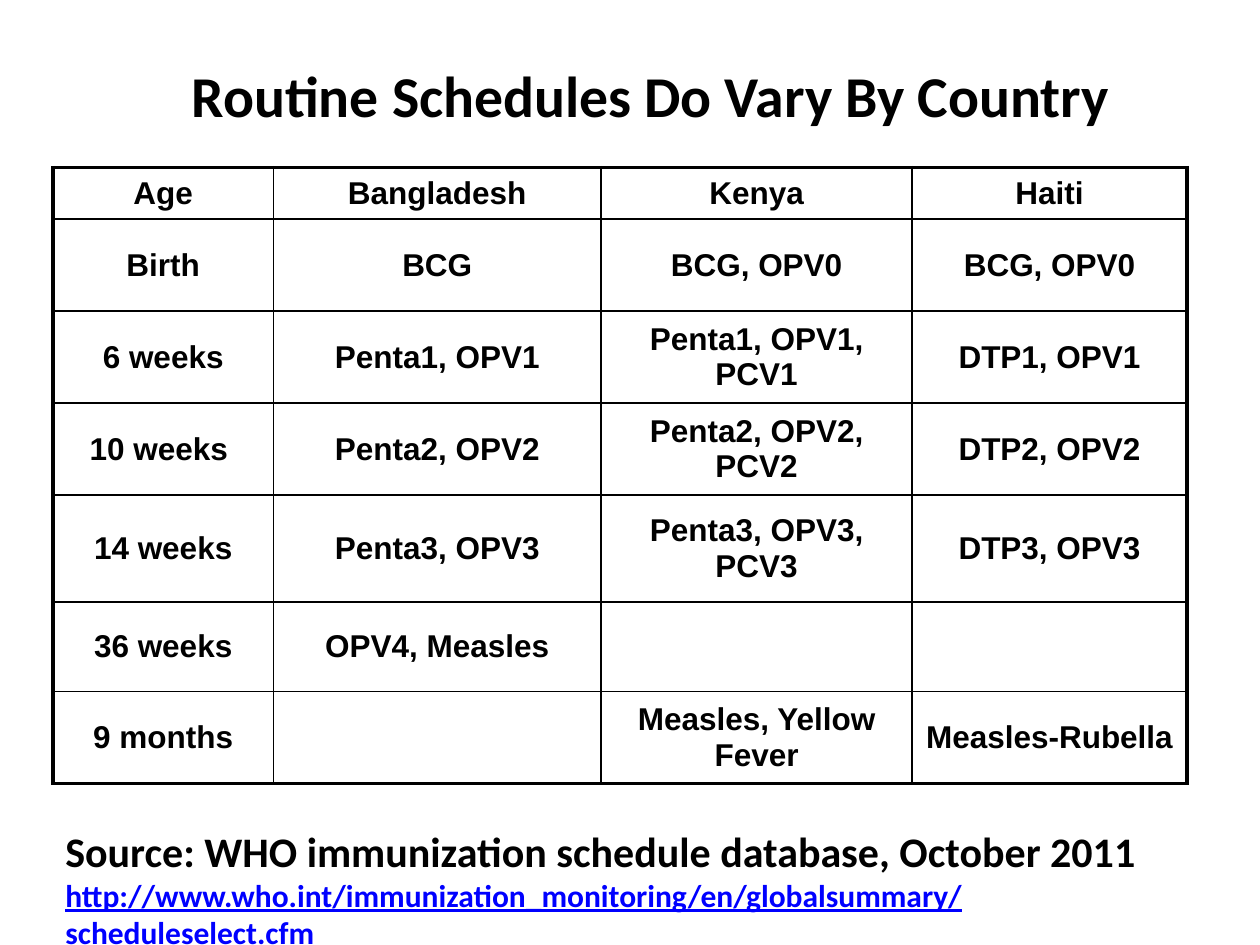
from lxml import etree
from pptx import Presentation
from pptx import util as u
from pptx.dml.color import RGBColor
from pptx.enum import text
from pptx.oxml.ns import qn

BLACK = RGBColor(0, 0, 0)
LINK_BLUE = RGBColor(0, 0, 0xFF)
WIDTH, HEIGHT = u.Inches(10), u.Inches(7.5)
LEFT = u.Inches(0.42)
THICK, THIN = u.Pt(2.25), u.Pt(1)

COLUMNS = [1.75, 2.6, 2.47, 2.18]
ROWS = [0.41, 0.73, 0.73, 0.73, 0.85, 0.71, 0.73]
SCHEDULE = [
    ["Age", "Bangladesh", "Kenya", "Haiti"],
    ["Birth", "BCG", "BCG, OPV0", "BCG, OPV0"],
    ["6 weeks", "Penta1, OPV1", "Penta1, OPV1, PCV1", "DTP1, OPV1"],
    ["10 weeks ", "Penta2, OPV2", "Penta2, OPV2, PCV2", "DTP2, OPV2"],
    ["14 weeks", "Penta3, OPV3", "Penta3, OPV3, PCV3", "DTP3, OPV3"],
    ["36 weeks", "OPV4, Measles", "", ""],
    ["9 months", "", "Measles, Yellow Fever", "Measles-Rubella"],
]
TITLE = {"name": "Calibri", "size": u.Pt(33), "bold": True}
CELL = {"name": "Arial", "size": u.Pt(18), "bold": True}
SOURCE = {"name": "Calibri", "size": u.Pt(24), "bold": True}
LINK = {**SOURCE, "size": u.Pt(18), "underline": True}


def apply(target, values):
    for name, value in values.items():
        setattr(target, name, value)


def write(para, words, font, color=BLACK):
    span = para.add_run()
    span.text = words
    apply(span.font, font)
    span.font.color.rgb = color


def add_box(page, left, top, width, height, frame_format):
    box = page.shapes.add_textbox(left, top, width, height)
    apply(box.text_frame, {"word_wrap": True, **frame_format})
    return box.text_frame


def set_borders(cell, widths):
    """Draw the left, right, top and bottom edges, in that order."""
    properties = cell._tc.get_or_add_tcPr()
    for index, (side, width) in enumerate(zip("LRTB", widths)):
        line = etree.Element(qn(f"a:ln{side}"), w=str(width))
        fill = etree.SubElement(line, qn("a:solidFill"))
        etree.SubElement(fill, qn("a:srgbClr"), val=str(BLACK))
        properties.insert(index, line)


def space_before(para, percent):
    """Set the gap above a paragraph as a share of its text size."""
    gap = etree.Element(qn("a:spcBef"))
    etree.SubElement(gap, qn("a:spcPct"), val=str(percent * 1000))
    para._p.get_or_add_pPr().insert(0, gap)


def fill_cell(cell, words):
    cell.fill.background()
    cell.vertical_anchor = text.MSO_ANCHOR.MIDDLE
    para = cell.text_frame.paragraphs[0]
    para.alignment = text.PP_ALIGN.CENTER
    space_before(para, 20)
    if words:
        write(para, words, CELL)


def add_schedule(page):
    table = page.shapes.add_table(
        len(ROWS), len(COLUMNS), LEFT, u.Inches(1.33),
        u.Inches(sum(COLUMNS)), u.Inches(sum(ROWS))).table
    apply(table, {"first_row": False, "horz_banding": False})
    for column, width in zip(table.columns, COLUMNS):
        column.width = u.Inches(width)
    for row, height in zip(table.rows, ROWS):
        row.height = u.Inches(height)
    last_row, last_column = len(ROWS) - 1, len(COLUMNS) - 1
    for r, entries in enumerate(SCHEDULE):
        for c, words in enumerate(entries):
            cell = table.cell(r, c)
            fill_cell(cell, words)
            outer = (c == 0, c == last_column, r == 0, r == last_row)
            set_borders(cell, [THICK if edge else THIN for edge in outer])


def add_title(page):
    left = u.Inches(0.33)
    frame = add_box(page, left, 0, WIDTH - left, int(HEIGHT * 0.2),
                    {"vertical_anchor": text.MSO_ANCHOR.MIDDLE})
    para = frame.paragraphs[0]
    para.alignment = text.PP_ALIGN.CENTER
    write(para, "Routine Schedules Do Vary By Country", TITLE)


def add_source(page):
    frame = add_box(page, LEFT, u.Inches(6.5), u.Inches(9.08), u.Inches(1.11),
                    {"auto_size": text.MSO_AUTO_SIZE.SHAPE_TO_FIT_TEXT})
    write(frame.paragraphs[0],
          "Source: WHO immunization schedule database, October 2011", SOURCE)
    write(frame.add_paragraph(),
          "http://www.who.int/immunization_monitoring/en/globalsummary/"
          "scheduleselect.cfm", LINK, LINK_BLUE)


def main():
    deck = Presentation()
    apply(deck, {"slide_width": WIDTH, "slide_height": HEIGHT})
    page = deck.slides.add_slide(deck.slide_layouts[6])
    add_title(page)
    add_schedule(page)
    add_source(page)
    deck.save("out.pptx")


if __name__ == "__main__":
    main()
